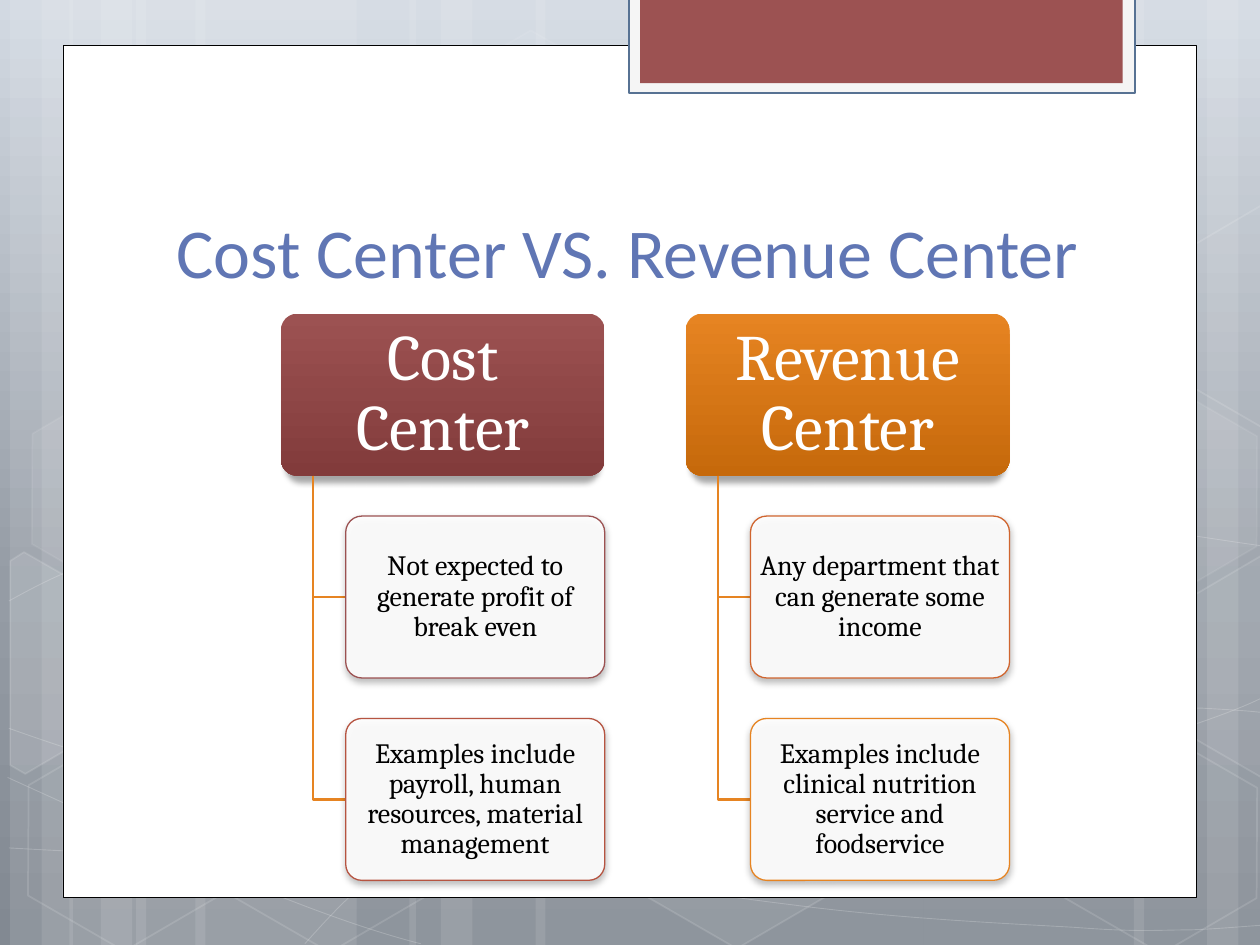
import math
from dataclasses import dataclass

from lxml import etree
from pptx import Presentation
from pptx import util as u
from pptx.dml.color import RGBColor
from pptx.enum import shapes, text
from pptx.oxml.ns import qn

COLORS = {
    "white": "FFFFFF", "black": "000000", "tab": "F5F5F5", "tab_line": "577293",
    "title": "6076B4", "red": "9C5252", "dark_red": "823B3B", "brick": "B65441",
    "rust": "D0652F", "orange": "E68422", "dark_orange": "C6690B",
    "sky": "D2D9E2", "haze": "959CA5", "slate": "828992",
}
KINDS = shapes.MSO_SHAPE


@dataclass
class Grid:
    """Square cells laid out from a left and top edge, in inches."""
    left: float
    top: float
    cell: float

    def point(self, column, row):
        return (u.Inches(self.left + column * self.cell),
                u.Inches(self.top + row * self.cell))

    def box(self, column, row, columns, rows):
        return (*self.point(column, row),
                u.Inches(columns * self.cell), u.Inches(rows * self.cell))


def rgb(name):
    return RGBColor.from_string(COLORS[name])


def set_alpha(parent, percent):
    color = parent.find(qn("a:solidFill")).find(qn("a:srgbClr"))
    etree.SubElement(color, qn("a:alpha"), val=str(percent * 1000))


def set_gradient(fill, element, stops):
    """Fill from top to bottom with (percent, colour name) stops."""
    fill.gradient()
    fill.gradient_angle = 270
    stop_list = next(element.iter(qn("a:gsLst")))
    for old_stop in list(stop_list):
        stop_list.remove(old_stop)
    for percent, name in stops:
        stop = etree.SubElement(stop_list, qn("a:gs"), pos=str(percent * 1000))
        etree.SubElement(stop, qn("a:srgbClr"), val=COLORS[name])


def style(shape, fill=None, alpha=None, line=None, width=1, line_alpha=None):
    shape.shadow.inherit = False
    properties = shape.element.spPr
    if fill:
        shape.fill.solid()
        shape.fill.fore_color.rgb = rgb(fill)
        if alpha:
            set_alpha(properties, alpha)
    else:
        shape.fill.background()
    if line:
        shape.line.color.rgb = rgb(line)
        shape.line.width = u.Pt(width)
        if line_alpha:
            set_alpha(properties.find(qn("a:ln")), line_alpha)
    else:
        shape.line.fill.background()
    return shape


def add_box(slide, kind, box, adjustments=(), **look):
    shape = slide.shapes.add_shape(kind, *box)
    for index, value in enumerate(adjustments):
        shape.adjustments[index] = value
    return style(shape, **look)


def add_outline(slide, grid, points, close=False, **look):
    first, *rest = [grid.point(*point) for point in points]
    builder = slide.shapes.build_freeform(*first)
    builder.add_line_segments(rest, close=close)
    return style(builder.convert_to_shape(), **look)


def add_curve(slide, grid, knots, **look):
    """Chain of cubic curves: a start, then three points per curve."""
    shape = add_outline(slide, grid, knots, **look)
    segments = list(shape.element.iter(qn("a:lnTo")))
    for start in range(0, len(segments), 3):
        curve = etree.Element(qn("a:cubicBezTo"))
        segments[start].addprevious(curve)
        for segment in segments[start:start + 3]:
            curve.append(segment[0])
            segment.getparent().remove(segment)


def add_shadow(shape, alpha, blur, distance, scale=100):
    effects = shape.element.spPr.find(qn("a:effectLst"))
    shadow = etree.SubElement(
        effects, qn("a:outerShdw"), blurRad=str(u.Pt(blur)), dist=str(u.Pt(distance)),
        dir="5400000", sx=str(scale * 1000), algn="ctr", rotWithShape="0")
    color = etree.SubElement(shadow, qn("a:srgbClr"), val=COLORS["black"])
    etree.SubElement(color, qn("a:alpha"), val=str(alpha * 1000))


def set_text(shape, words, font="Cambria", size=16, color="black", spacing=None,
             anchor=text.MSO_ANCHOR.MIDDLE, margins=(0.03, 0.02)):
    frame = shape.text_frame
    frame.word_wrap = True
    frame.vertical_anchor = anchor
    frame.margin_left = frame.margin_right = u.Inches(margins[0])
    frame.margin_top = frame.margin_bottom = u.Inches(margins[1])
    paragraph = frame.paragraphs[0]
    paragraph.alignment = text.PP_ALIGN.CENTER
    paragraph.line_spacing = spacing
    run = paragraph.add_run()
    run.text = words
    run.font.name, run.font.size = font, u.Pt(size)
    run.font.color.rgb = rgb(color)


def turn(points, center, degrees):
    cosine, sine = math.cos(math.radians(degrees)), math.sin(math.radians(degrees))
    offsets = [(x - center[0], y - center[1]) for x, y in points]
    return [(center[0] + x * cosine - y * sine, center[1] + x * sine + y * cosine)
            for x, y in offsets]


def draw_backdrop(slide, grid):
    set_gradient(slide.background.fill, slide.element,
                 [(0, "sky"), (62, "haze"), (100, "slate")])
    # Vertical light bands: left, width
    for left, width in [(1.08, 1.75), (0.08, 0.5), (0.33, 0.83), (1.55, 1.75),
                        (0.55, 0.5), (0.8, 0.83), (7.33, 1.75), (9.58, 0.5),
                        (9, 0.83), (4.25, 3.08), (3.25, 0.5), (3.5, 0.83)]:
        add_box(slide, KINDS.RECTANGLE, grid.box(left, 0, width, 7.5),
                fill="white", alpha=10)
    # Thin sweeping curves
    for knots in [
        [(0.07, 6.73), (0.61, 6.76), (1.15, 6.79), (1.9, 6.78), (2.65, 6.77),
         (3.58, 6.75), (4.58, 6.65), (5.58, 6.55), (7, 6.36), (7.92, 6.17),
         (8.83, 5.98), (9.77, 5.68), (10.07, 5.51)],
        [(0.07, 4.77), (0.36, 4.61), (0.65, 4.46), (1.21, 4.31), (1.78, 4.16),
         (2.59, 3.94), (3.47, 3.87), (4.36, 3.8), (5.44, 3.79), (6.54, 3.87),
         (7.64, 3.95), (9.47, 4.26), (10.07, 4.34)],
        [(0.06, 6.17), (1.27, 6.72), (2.47, 7.27), (3.34, 7.49)],
        [(0.07, 5.78), (0.38, 5.89), (0.7, 6), (1.28, 6.16), (1.86, 6.31),
         (2.73, 6.56), (3.57, 6.73), (4.4, 6.9), (5.45, 7.08), (6.28, 7.18),
         (7.11, 7.29), (8, 7.33), (8.53, 7.36), (9.05, 7.4), (9.19, 7.38),
         (9.45, 7.38), (9.71, 7.37), (9.89, 7.35), (10.07, 7.34)],
        [(2.42, 7.49), (2.6, 7.29), (2.78, 7.09), (3.02, 6.91), (3.26, 6.73),
         (3.6, 6.53), (3.88, 6.39), (4.16, 6.25), (4.33, 6.19), (4.7, 6.09),
         (5.06, 5.99), (5.73, 5.85), (6.08, 5.78), (6.44, 5.71), (6.49, 5.71),
         (6.8, 5.69), (7.11, 5.66), (7.6, 5.63), (7.94, 5.62), (8.29, 5.61),
         (8.86, 5.62), (8.86, 5.62), (8.86, 5.62), (9.53, 5.62), (9.53, 5.62),
         (9.71, 5.63), (9.88, 5.64), (9.97, 5.65), (10.06, 5.66), (10.03, 5.65),
         (10.06, 5.66)],
    ]:
        add_curve(slide, grid, knots, line="white", width=0.5, line_alpha=20)
    # Hexagons: left, top, fill opacity, line opacity
    for left, top, alpha, line_alpha in [
            (3.34, 0.36, 4, 8), (4.97, 5.89, 6, 12), (0.11, 5.91, 0, 12),
            (0.14, 3.12, 7, 8), (1.74, 5.92, 0, 12), (7.53, 4.53, 10, 12),
            (8.34, 5.93, 0, 12), (8.34, 3.14, 7, 8)]:
        hexagon = add_box(slide, KINDS.HEXAGON, grid.box(left, top, 1.75, 1.52),
                          (0.285, 1.155), fill="white" if alpha else None,
                          alpha=alpha, line="white", line_alpha=line_alpha)
        hexagon.rotation = 30
    # Hexagons cut by the slide edge
    left_cut = [(0.08, 4.45), (0.19, 4.38), (0.96, 4.82), (0.95, 5.7),
                (0.2, 6.14), (0.08, 6.07)]
    right_cut = [(9.26, 4.85), (10.01, 4.41), (10.09, 4.46), (10.09, 6.13),
                 (10.02, 6.17), (9.26, 5.73)]
    upper_cut = [(x, y - 2.78) for x, y in right_cut]
    for points, center, alpha in [(left_cut, (0.36, 5.35), 10),
                                  (right_cut, (9.85, 5.2), 4),
                                  (upper_cut, (9.85, 2.42), 0)]:
        hexagon = add_outline(slide, grid, turn(points, center, -30), close=True,
                              fill="white" if alpha else None, alpha=alpha,
                              line="white", line_alpha=12)
        hexagon.rotation = 30


def draw_page(slide, grid):
    for box, look in [
            ((0.5, 0.36, 9, 6.76), dict(fill="white", line="black", width=0.5)),
            ((4.99, -0.02, 4.02, 0.76), dict(fill="tab", line="tab_line", width=1.25)),
            ((5.08, -0.02, 3.83, 0.68), dict(fill="red"))]:
        add_box(slide, KINDS.RECTANGLE, grid.box(*box), **look)


def place_title(slide, grid, words):
    title = slide.shapes.title
    title.left, title.top, title.width, title.height = grid.box(1.14, 1.12, 7.68, 1.25)
    set_text(title, words, font="Calibri", size=40, color="title",
             anchor=text.MSO_ANCHOR.BOTTOM, margins=(0.1, 0.05))
    slide.shapes.element.append(title.element)  # in front of the page


def draw_branch(slide, grid, heading, shades, details):
    """Heading of 8 by 4 cells, with a detail card every 5 rows below it."""
    header = add_box(slide, KINDS.ROUNDED_RECTANGLE, grid.box(0, 0, 8, 4), (0.1,))
    set_gradient(header.fill, header.element, [(0, shades[0]), (100, shades[1])])
    add_shadow(header, 34, 3.5, 4, scale=97)
    set_text(header, heading, size=37, color="white", spacing=0.9, margins=(0.08, 0.05))
    for row, (words, line) in enumerate(details, start=1):
        top = 5 * row
        add_outline(slide, grid, [(0.8, 4), (0.8, top + 2), (1.6, top + 2)],
                    line="orange", width=1.25)
        card = add_box(slide, KINDS.ROUNDED_RECTANGLE, grid.box(1.6, top, 6.4, 4), (0.1,),
                       fill="white", alpha=90, line=line, width=0.75)
        add_shadow(card, 28, 4, 2)
        set_text(card, words, spacing=0.9)


def main():
    presentation = Presentation()
    presentation.slide_width, presentation.slide_height = u.Inches(10), u.Inches(7.5)
    slide = presentation.slides.add_slide(presentation.slide_layouts[5])
    slide_grid = Grid(0, 0, 1)
    draw_backdrop(slide, slide_grid)
    draw_page(slide, slide_grid)
    place_title(slide, slide_grid, "Cost Center VS. Revenue Center")
    branches = [
        ("Cost Center", ("red", "dark_red"),
         [("Not expected to generate profit of break even", "red"),
          ("Examples include payroll, human resources, material management", "brick")]),
        ("Revenue Center", ("orange", "dark_orange"),
         [("Any department that can generate some income", "rust"),
          ("Examples include clinical nutrition service and foodservice", "orange")]),
    ]
    cell = 2.57 / 8
    for index, branch in enumerate(branches):
        draw_branch(slide, Grid(2.23 + index * 10 * cell, 2.49, cell), *branch)
    presentation.save("out.pptx")


if __name__ == "__main__":
    main()
